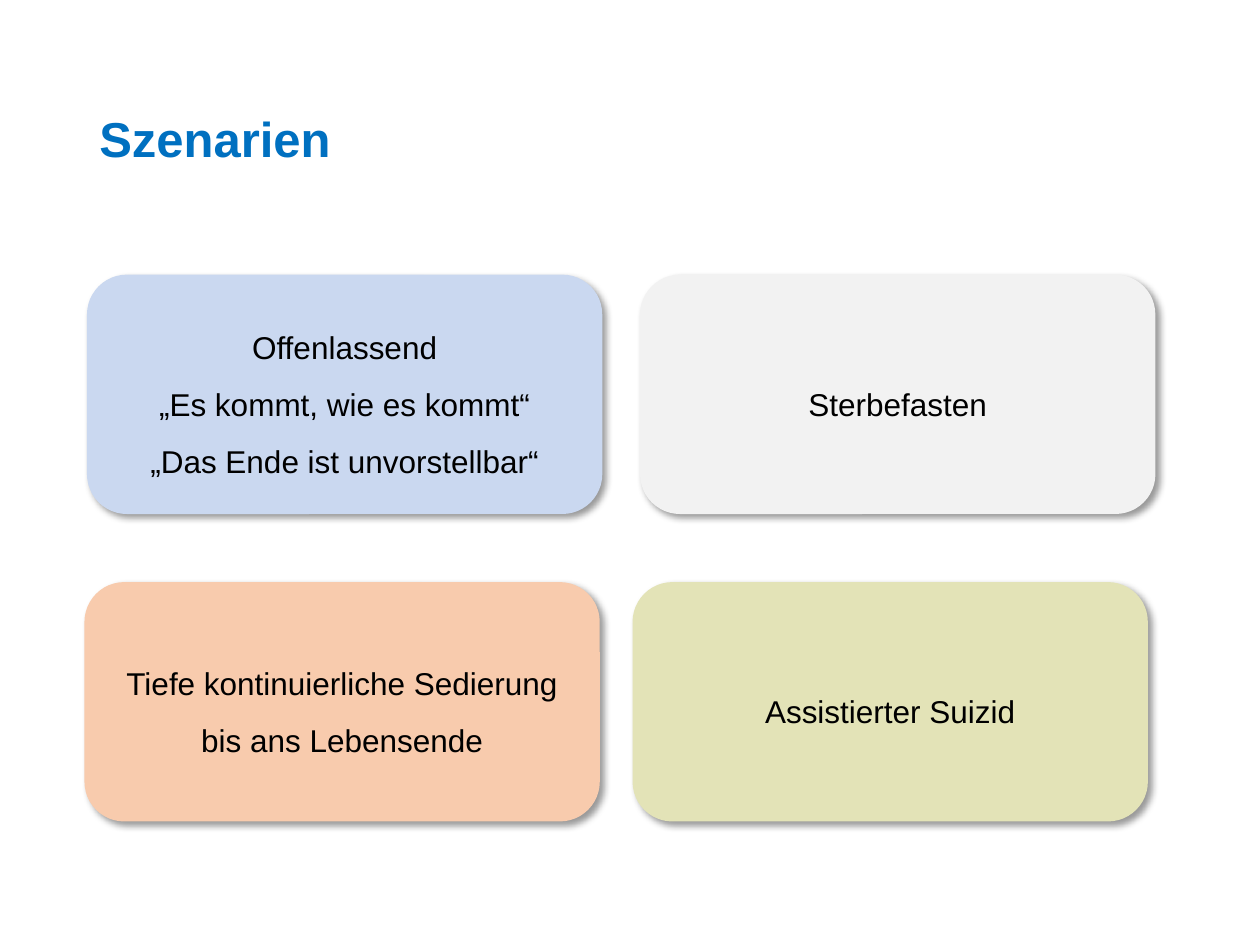
from lxml import etree
from pptx import Presentation, util as u
from pptx.dml.color import RGBColor
from pptx.enum import shapes, text
from pptx.oxml import ns

CARD_WIDTH, CARD_HEIGHT = 4.09, 1.9
ROW_TOP, ROW_STEP = 2.18, 2.44
ROWS = [
    [(5.08, "F2F2F2", ["Sterbefasten"]),
     (0.69, "CAD8F0", ["Offenlassend", "„Es kommt, wie es kommt“",
                       "„Das Ende ist unvorstellbar“"])],
    [(5.02, "E3E3B7", ["Assistierter Suizid"]),
     (0.67, "F8CBAD", ["Tiefe kontinuierliche Sedierung bis ans Lebensende"])],
]


def color(value):
    """Return the colour for a hex string."""
    return RGBColor.from_string(value)


def write(shape, lines, size, value, spacing, align, bold=False):
    """Write lines into one vertically centred paragraph."""
    frame = shape.text_frame
    frame.word_wrap = True
    frame.vertical_anchor = text.MSO_ANCHOR.MIDDLE
    paragraph = frame.paragraphs[0]
    paragraph.line_spacing = spacing
    paragraph.alignment = align
    for index, line in enumerate(lines):
        if index:
            paragraph.add_line_break()
        run = paragraph.add_run()
        run.text = line
        run.font.name = "Arial"
        run.font.size = u.Pt(size)
        run.font.bold = bold
        run.font.color.rgb = color(value)


def add_shadow(shape):
    """Give a shape a soft shadow to the lower right."""
    shape.shadow.inherit = False
    effects = shape._element.spPr.find(ns.qn("a:effectLst"))
    shadow = etree.SubElement(
        effects, ns.qn("a:outerShdw"), blurRad=str(u.Pt(4)), dist=str(u.Pt(3)),
        dir=str(45 * 60000), algn="tl", rotWithShape="0")
    black = etree.SubElement(shadow, ns.qn("a:srgbClr"), val="000000")
    etree.SubElement(black, ns.qn("a:alpha"), val="40000")


def add_title(slide, box, title):
    """Place the slide title in its box."""
    shape = slide.shapes.add_textbox(*map(u.Inches, box))
    write(shape, [title], 28, "0070C0", 0.9, text.PP_ALIGN.LEFT, bold=True)


def add_card(slide, box, fill, lines):
    """Place one rounded scenario card in its box."""
    shape = slide.shapes.add_shape(
        shapes.MSO_SHAPE.ROUNDED_RECTANGLE, *map(u.Inches, box))
    shape.fill.solid()
    shape.fill.fore_color.rgb = color(fill)
    shape.line.fill.background()
    add_shadow(shape)
    write(shape, lines, 18, "000000", 1.5, text.PP_ALIGN.CENTER)


def main():
    """Build and save the slide."""
    presentation = Presentation()
    presentation.slide_width, presentation.slide_height = u.Inches(10), u.Inches(7.5)
    slide = presentation.slides.add_slide(presentation.slide_layouts[6])
    add_title(slide, (0.69, 0.4, 8.62, 1.45), "Szenarien")
    for row, cards in enumerate(ROWS):
        for left, fill, lines in cards:
            box = (left, ROW_TOP + row * ROW_STEP, CARD_WIDTH, CARD_HEIGHT)
            add_card(slide, box, fill, lines)
    presentation.save("out.pptx")


if __name__ == "__main__":
    main()
